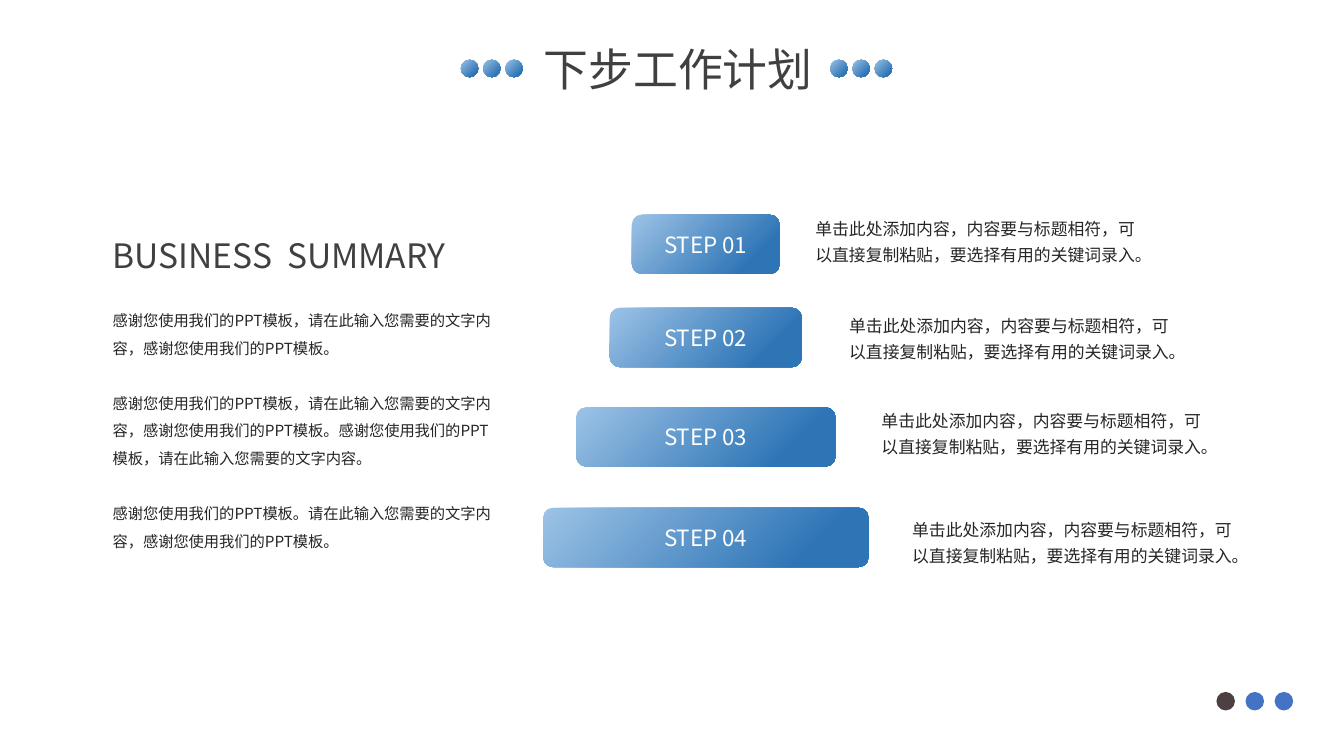
"""Build the next-step work plan slide with four widening steps."""
from dataclasses import dataclass

from lxml.etree import SubElement
from pptx import Presentation
from pptx.dml.color import RGBColor
from pptx.enum.shapes import MSO_SHAPE as Preset
from pptx.enum.text import MSO_ANCHOR as Anchor, MSO_AUTO_SIZE as AutoSize, PP_ALIGN as Align
from pptx.oxml.ns import qn
from pptx.shapes.autoshape import Shape
from pptx.slide import Slide
from pptx.text.text import TextFrame
from pptx.util import Cm, Pt

FONT = "Noto Sans CJK SC"
COLORS = {
    "light": "9DC3E6",
    "deep": "2E75B6",
    "heading": "404040",
    "body": "262626",
    "label": "FFFFFF",
    "brown": "4C4042",
    "blue": "4472C4",
}
BAR_CENTER, BAR_HEIGHT = 13.34, 1.12
STEP_NOTE = "单击此处添加内容，内容要与标题相符，可以直接复制粘贴，要选择有用的关键词录入。"
SUMMARY = [
    "感谢您使用我们的PPT模板，请在此输入您需要的文字内容，感谢您使用我们的PPT模板。",
    "感谢您使用我们的PPT模板，请在此输入您需要的文字内容，感谢您使用我们的PPT模板。"
    "感谢您使用我们的PPT模板，请在此输入您需要的文字内容。",
    "感谢您使用我们的PPT模板。请在此输入您需要的文字内容，感谢您使用我们的PPT模板。",
]


@dataclass(frozen=True)
class Step:
    """One step: its bar and the place of its note, in centimetres."""
    label: str
    bar_top: float
    bar_width: float
    note_left: float
    note_top: float


@dataclass(frozen=True)
class DotRow:
    """A row of evenly spaced dots, in centimetres; no colour means gradient."""
    left: float
    top: float
    size: float
    pitch: float
    colors: tuple[str | None, ...] = (None, None, None)


@dataclass(frozen=True)
class TextStyle:
    """Look of a block of paragraphs."""
    size: float
    color: str
    align: Align = Align.LEFT
    line_spacing: float = 1.0
    gap: float = 0


STEPS = [
    Step("STEP 01", 4.06, 2.79, 15.16, 3.89),
    Step("STEP 02", 5.82, 3.63, 15.80, 5.72),
    Step("STEP 03", 7.70, 4.90, 16.41, 7.52),
    Step("STEP 04", 9.60, 6.15, 16.99, 9.58),
]
DOT_ROWS = [
    DotRow(8.71, 1.13, 0.33, 0.42),
    DotRow(15.69, 1.13, 0.33, 0.42),
    DotRow(22.99, 13.08, 0.35, 0.55, ("brown", "blue", "blue")),
]
TITLE_STYLE = TextStyle(24, "heading", Align.CENTER)
HEADING_STYLE = TextStyle(18, "heading")
SUMMARY_STYLE = TextStyle(8.2, "body", line_spacing=1.5, gap=14.8)
LABEL_STYLE = TextStyle(12, "label", Align.CENTER)
NOTE_STYLE = TextStyle(9, "body", line_spacing=1.3)


def rgb(name: str) -> RGBColor:
    """Return the named colour."""
    return RGBColor.from_string(COLORS[name])


def write(frame: TextFrame, texts: list[str], style: TextStyle) -> None:
    """Fill a text frame with styled paragraphs."""
    for index, text in enumerate(texts):
        paragraph = frame.add_paragraph() if index else frame.paragraphs[0]
        paragraph.text = text
        paragraph.alignment = style.align
        paragraph.line_spacing = style.line_spacing
        paragraph.space_before = Pt(style.gap if index else 0)
        font = paragraph.font
        font.name = FONT
        font.size = Pt(style.size)
        font.color.rgb = rgb(style.color)
        defaults = paragraph._p.pPr.find(qn("a:defRPr"))
        SubElement(defaults, qn("a:ea"), typeface=FONT)


def add_text(slide: Slide, left: float, top: float, width: float, height: float,
             texts: list[str], style: TextStyle, wrap: bool = True) -> None:
    """Add a text box that grows with its text."""
    frame = slide.shapes.add_textbox(Cm(left), Cm(top), Cm(width), Cm(height)).text_frame
    frame.word_wrap = wrap
    frame.auto_size = AutoSize.SHAPE_TO_FIT_TEXT
    write(frame, texts, style)


def add_filled(slide: Slide, preset: Preset, left: float, top: float, width: float,
               height: float, color: str | None = None) -> Shape:
    """Add a borderless shape with a solid colour or the blue gradient."""
    shape = slide.shapes.add_shape(preset, Cm(left), Cm(top), Cm(width), Cm(height))
    shape.shadow.inherit = False
    shape.line.fill.background()
    if color:
        shape.fill.solid()
        shape.fill.fore_color.rgb = rgb(color)
    else:
        shape.fill.gradient()
        shape.fill.gradient_angle = 315
        for stop, name, position in zip(shape.fill.gradient_stops, ("light", "deep"), (0, 0.81)):
            stop.color.rgb = rgb(name)
            stop.position = position
    return shape


def add_step(slide: Slide, step: Step) -> None:
    """Add a labelled bar and its note."""
    bar = add_filled(slide, Preset.ROUNDED_RECTANGLE, BAR_CENTER - step.bar_width / 2,
                     step.bar_top, step.bar_width, BAR_HEIGHT)
    bar.text_frame.vertical_anchor = Anchor.MIDDLE
    write(bar.text_frame, [step.label], LABEL_STYLE)
    add_text(slide, step.note_left, step.note_top, 6.76, 1.22, [STEP_NOTE], NOTE_STYLE)


def add_dots(slide: Slide, row: DotRow) -> None:
    """Add one row of dots."""
    for index, color in enumerate(row.colors):
        add_filled(slide, Preset.OVAL, row.left + index * row.pitch, row.top,
                   row.size, row.size, color)


def add_title(slide: Slide, text: str) -> None:
    """Place and style the slide title."""
    title = slide.shapes.title
    title.left, title.top, title.width, title.height = Cm(5.08), Cm(0.66), Cm(15.47), Cm(1.27)
    title.text_frame.vertical_anchor = Anchor.MIDDLE
    write(title.text_frame, [text], TITLE_STYLE)


def main() -> None:
    """Build and save the slide."""
    deck = Presentation()
    deck.slide_width, deck.slide_height = Cm(25.4), Cm(14.29)
    slide = deck.slides.add_slide(deck.slide_layouts.get_by_name("Title Only"))
    add_title(slide, "下步工作计划")
    add_text(slide, 1.88, 4.32, 7.44, 1.02, ["BUSINESS  SUMMARY"], HEADING_STYLE, wrap=False)
    add_text(slide, 1.88, 5.59, 7.72, 5.03, SUMMARY, SUMMARY_STYLE)
    for step in STEPS:
        add_step(slide, step)
    for row in DOT_ROWS:
        add_dots(slide, row)
    deck.save("out.pptx")


if __name__ == "__main__":
    main()
